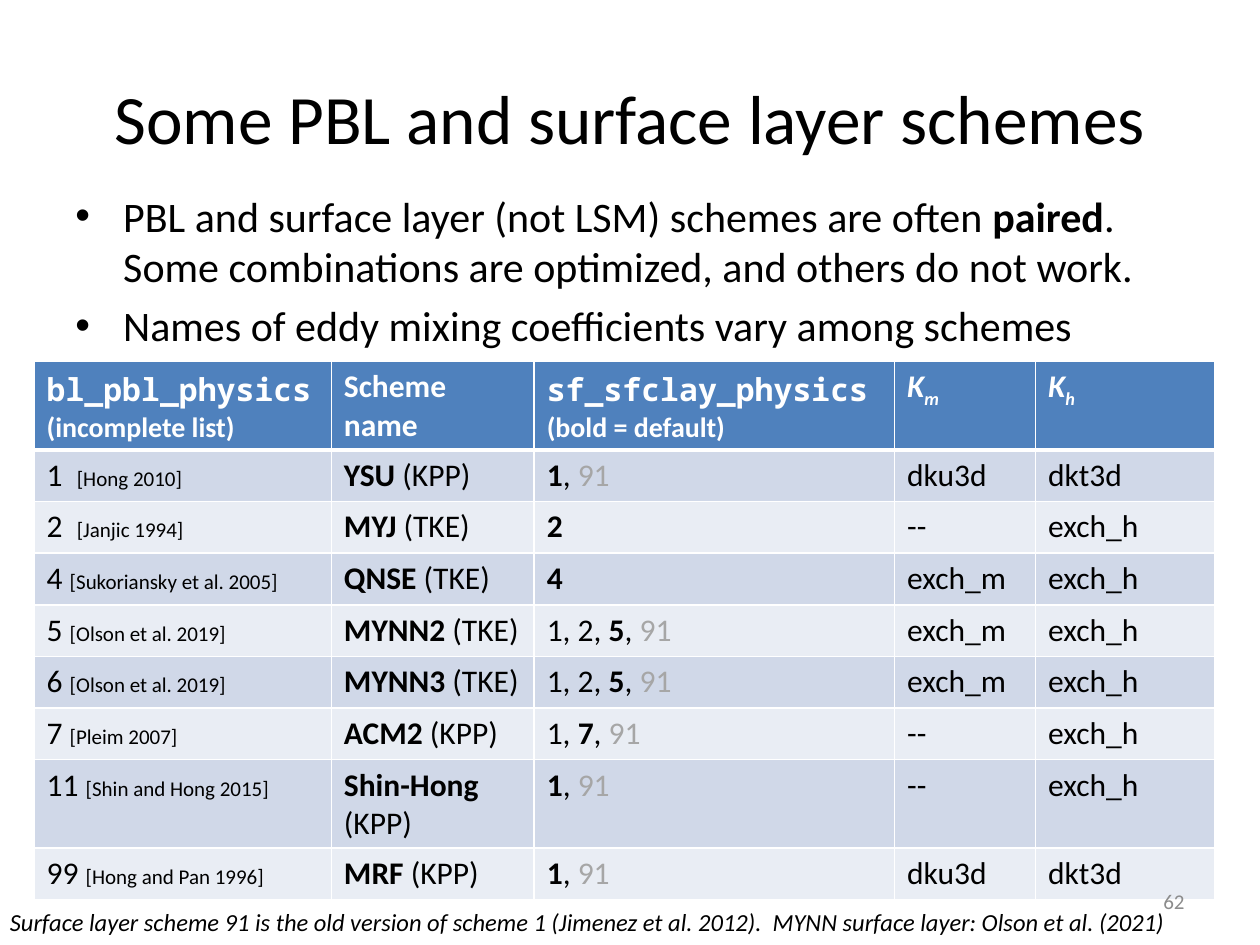
"""Builds a slide listing PBL and surface layer schemes."""
from lxml import etree
from pptx import Presentation
from pptx.dml.color import RGBColor
from pptx.enum.text import MSO_ANCHOR, PP_ALIGN
from pptx.oxml.ns import qn
from pptx.util import Inches, Pt

TOP, MIDDLE = MSO_ANCHOR.TOP, MSO_ANCHOR.MIDDLE
LEFT, CENTER, RIGHT = PP_ALIGN.LEFT, PP_ALIGN.CENTER, PP_ALIGN.RIGHT
FONT, MONO = "Calibri", "Noto Sans Mono"
COLORS = {
    "text": "000000", "white": "FFFFFF", "old": "A6A6A6", "number": "8C8C8C",
    "header": "4F81BD", "odd": "D0D8E8", "even": "E9EDF4",
}
COLUMNS = [2.36, 1.61, 2.86, 1.12, 1.42]
ROW_HEIGHT = 0.41
HEADER = [
    [[("bl_pbl_physics ", {"font": MONO}), ("(incomplete list)", {"size": 16})]],
    [[("Scheme name", {})]],
    [[("sf_sfclay_physics", {"font": MONO})], [("(bold = default)", {"size": 16})]],
    [[("K", {"italic": True}), ("m", {"italic": True, "sub": True})]],
    [[("K", {"italic": True}), ("h", {"italic": True, "sub": True})]],
]
SCHEMES = [
    ("1  ", "Hong 2010", "YSU", "KPP", "1, 91", "1", "dku3d", "dkt3d"),
    ("2  ", "Janjic 1994", "MYJ", "TKE", "2", "2", "--", "exch_h"),
    ("4 ", "Sukoriansky et al. 2005", "QNSE", "TKE", "4", "4", "exch_m", "exch_h"),
    ("5 ", "Olson et al. 2019", "MYNN2", "TKE", "1, 2, 5, 91", "5", "exch_m", "exch_h"),
    ("6 ", "Olson et al. 2019", "MYNN3", "TKE", "1, 2, 5, 91", "5", "exch_m", "exch_h"),
    ("7 ", "Pleim 2007", "ACM2", "KPP", "1, 7, 91", "7", "--", "exch_h"),
    ("11 ", "Shin and Hong 2015", "Shin-Hong", "KPP", "1, 91", "1", "--", "exch_h"),
    ("99 ", "Hong and Pan 1996", "MRF", "KPP", "1, 91", "1", "dku3d", "dkt3d"),
]
BULLETS = [
    [("PBL and surface layer (not LSM) schemes are often ", {}), ("paired", {"bold": True}),
     (".  Some combinations are optimized, and others do not work.", {})],
    [("Names of eddy mixing coefficients vary among schemes", {})],
]


def rgb(name):
    """Return the named colour."""
    return RGBColor.from_string(COLORS[name])


def fill_text(tf, paragraphs, size, color="text", bold=False, italic=False, align=LEFT):
    """Write paragraphs of (text, style) runs into a text frame."""
    for i, runs in enumerate(paragraphs):
        p = tf.paragraphs[0] if i == 0 else tf.add_paragraph()
        p.alignment = align
        for text, style in runs:
            r = p.add_run()
            r.text = text
            r.font.name = style.get("font", FONT)
            r.font.size = Pt(style.get("size", size))
            r.font.bold = style.get("bold", bold)
            r.font.italic = style.get("italic", italic)
            r.font.color.rgb = rgb(style.get("color", color))
            if style.get("sub"):
                r.font._element.set("baseline", "-25000")


def add_text(s, box, paragraphs, size, anchor=TOP, wrap=True, **style):
    """Add a text box and return its text frame."""
    tf = s.shapes.add_textbox(*map(Inches, box)).text_frame
    tf.word_wrap = wrap
    tf.vertical_anchor = anchor
    fill_text(tf, paragraphs, size, **style)
    return tf


def add_bullets(s, box, paragraphs, size):
    """Add a bulleted list with hanging indents."""
    tf = add_text(s, box, paragraphs, size)
    for p in tf.paragraphs:
        p.space_before = Pt(size * 0.2)
        pPr = p._p.get_or_add_pPr()
        pPr.set("marL", str(Inches(0.38)))
        pPr.set("indent", str(-Inches(0.38)))
        etree.SubElement(pPr, qn("a:buFont")).set("typeface", "Arial")
        etree.SubElement(pPr, qn("a:buChar")).set("char", "•")


def set_borders(cell, top, bottom):
    """Draw white cell borders with the given top and bottom widths."""
    tcPr = cell._tc.get_or_add_tcPr()
    for side, width in (("lnL", 1), ("lnR", 1), ("lnT", top), ("lnB", bottom)):
        ln = etree.SubElement(tcPr, qn("a:" + side), w=str(Pt(width)))
        solid = etree.SubElement(ln, qn("a:solidFill"))
        etree.SubElement(solid, qn("a:srgbClr")).set("val", COLORS["white"])


def option_runs(options, default):
    """Return runs with the default option bold and the old scheme 91 grey."""
    runs = []
    for option in options.split(", "):
        if runs:
            runs.append((", ", {}))
        color = "old" if option == "91" else "text"
        runs.append((option, {"bold": option == default, "color": color}))
    return runs


def scheme_cells(number, source, name, kind, options, default, km, kh):
    """Return the paragraphs of each cell in a scheme row."""
    return [
        [[(number, {}), (f"[{source}]", {"size": 12})]],
        [[(name, {"bold": True}), (f" ({kind})", {})]],
        [option_runs(options, default)],
        [[(km, {})]],
        [[(kh, {})]],
    ]


def add_scheme_table(s, left, top):
    """Add the banded table of schemes."""
    rows = [HEADER] + [scheme_cells(*scheme) for scheme in SCHEMES]
    table = s.shapes.add_table(
        len(rows), len(COLUMNS), Inches(left), Inches(top),
        Inches(sum(COLUMNS)), Inches(ROW_HEIGHT * len(rows))).table
    for column, width in zip(table.columns, COLUMNS):
        column.width = Inches(width)
    for i, row in enumerate(rows):
        table.rows[i].height = Inches(ROW_HEIGHT)
        is_header = i == 0
        band = "header" if is_header else ("odd" if i % 2 else "even")
        for j, paragraphs in enumerate(row):
            cell = table.cell(i, j)
            set_borders(cell, 3 if i == 1 else 1, 3 if is_header else 1)
            cell.fill.solid()
            cell.fill.fore_color.rgb = rgb(band)
            fill_text(cell.text_frame, paragraphs, 18,
                      color="white" if is_header else "text", bold=is_header)


def main():
    """Build and save the slide."""
    prs = Presentation()
    prs.slide_width, prs.slide_height = Inches(10), Inches(7.5)
    s = prs.slides.add_slide(prs.slide_layouts[6])
    add_text(s, (0.5, 0.3, 9, 1.25), [[("Some PBL and surface layer schemes", {})]],
             39.6, anchor=MIDDLE, align=CENTER)
    add_bullets(s, (0.5, 1.46, 9, 4.95), BULLETS, 24)
    add_scheme_table(s, 0.27, 2.87)
    add_text(s, (7.17, 6.95, 2.33, 0.4), [[("62", {})]], 12,
             anchor=MIDDLE, color="number", align=RIGHT)
    note = ("Surface layer scheme 91 is the old version of scheme 1 (Jimenez et al. 2012).  "
            "MYNN surface layer: Olson et al. (2021)")
    add_text(s, (-0.02, 7.15, 9.38, 0.34), [[(note, {})]], 14, wrap=False, italic=True)
    prs.save("out.pptx")


if __name__ == "__main__":
    main()
